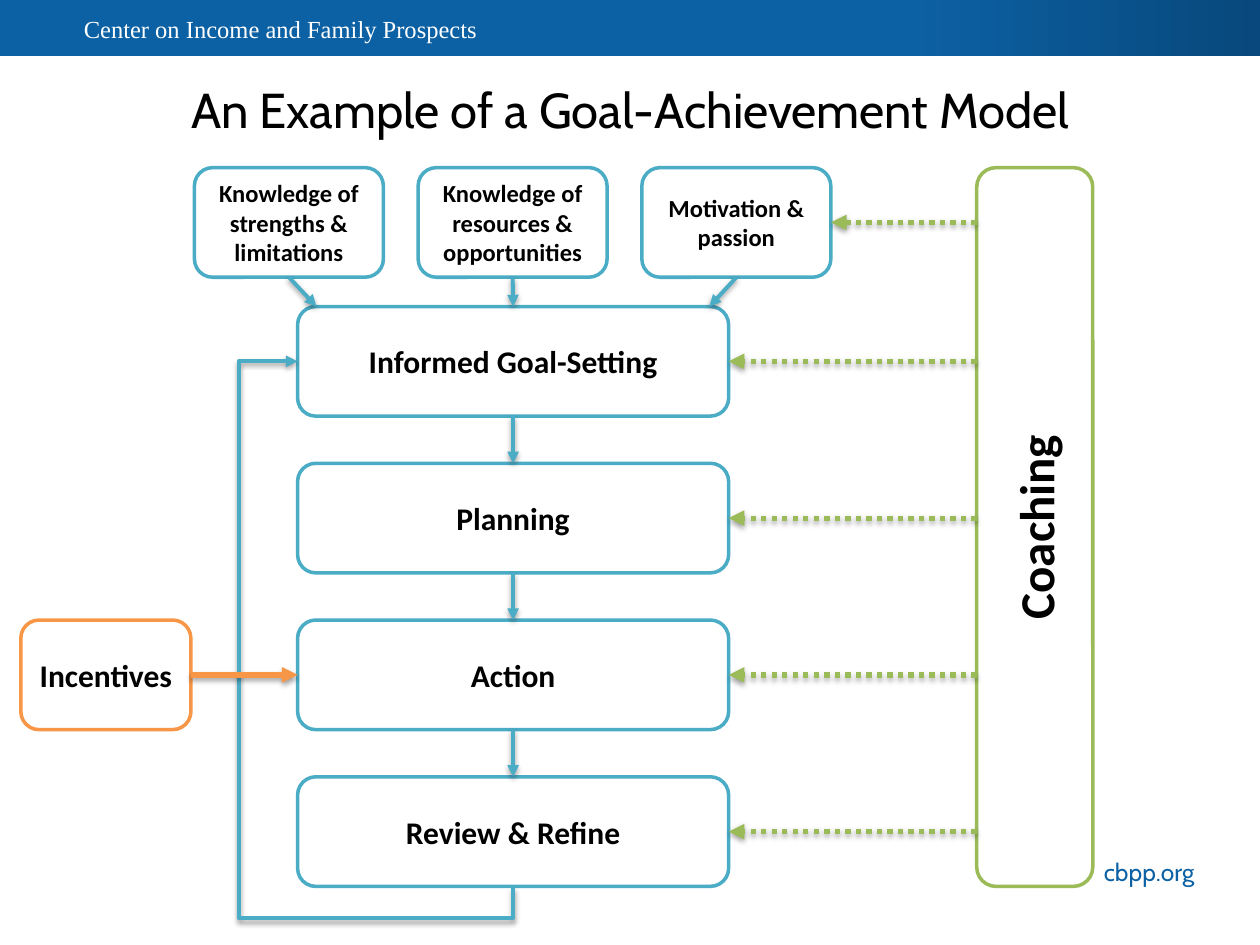
from lxml import etree
from pptx import Presentation
from pptx import util as u
from pptx.dml.color import RGBColor
from pptx.enum import dml, shapes, text
from pptx.oxml import parse_xml
from pptx.oxml.ns import nsdecls, qn

TEAL, GREEN, ORANGE = "4BACC6", "9BBB59", "F79646"
BLUE, NAVY, WHITE, BLACK = "0C61A4", "08487C", "FFFFFF", "000000"

# Lengths in cm
BOX_H = 2.21
INPUT_LEFT, INPUT_TOP, INPUT_W, INPUT_STEP = 3.92, 3.38, 3.81, 4.51
STAGE_LEFT, STAGE_TOP, STAGE_W, STAGE_STEP = 6.0, 6.18, 8.69, 3.16
COACH_LEFT, COACH_W = 19.69, 2.34
INCENTIVE_LEFT, INCENTIVE_W = 0.42, 3.43

INPUTS = ["Knowledge of strengths & limitations",
          "Knowledge of resources & opportunities",
          "Motivation & passion"]
STAGES = ["Informed Goal-Setting", "Planning", "Action", "Review & Refine"]

SHADOW = (f'<a:effectLst {nsdecls("a")}><a:outerShdw blurRad="40000" dist="20000" '
          'dir="5400000" rotWithShape="0"><a:srgbClr val="000000">'
          '<a:alpha val="38000"/></a:srgbClr></a:outerShdw></a:effectLst>')


def color(value):
    return RGBColor.from_string(value)


def cm(*lengths):
    return [u.Cm(length) for length in lengths]


def write(frame, words, size, font, ink, align, anchor, bold=False):
    frame.word_wrap = True
    frame.vertical_anchor = anchor
    paragraph = frame.paragraphs[0]
    paragraph.alignment = align
    run = paragraph.add_run()
    run.text = words
    run.font.size = u.Pt(size)
    run.font.name = font
    run.font.bold = bold
    run.font.color.rgb = color(ink)


def add_panel(slide, kind, left, top, width, height):
    panel = slide.shapes.add_shape(kind, *cm(left, top, width, height))
    panel.shadow.inherit = False
    panel.line.fill.background()
    return panel


def add_box(slide, words, left, top, width, height, edge, size):
    box = add_panel(slide, shapes.MSO_SHAPE.ROUNDED_RECTANGLE, left, top, width, height)
    box.fill.solid()
    box.fill.fore_color.rgb = color(WHITE)
    box.line.color.rgb = color(edge)
    box.line.width = u.Pt(2)
    write(box.text_frame, words, size, "Calibri", BLACK,
          text.PP_ALIGN.CENTER, text.MSO_ANCHOR.MIDDLE, bold=True)
    return box


def add_arrow(slide, start, end, ink, width, dotted=False,
              kind=shapes.MSO_CONNECTOR.STRAIGHT):
    arrow = slide.shapes.add_connector(kind, *cm(*start, *end))
    arrow.line.color.rgb = color(ink)
    arrow.line.width = u.Pt(width)
    if dotted:
        arrow.line.dash_style = dml.MSO_LINE.ROUND_DOT
    etree.SubElement(arrow.line._get_or_add_ln(), qn("a:tailEnd"), type="triangle")
    arrow.element.spPr.append(parse_xml(SHADOW))
    return arrow


def add_feedback_loop(slide, start, end):
    """Elbow arrow that leaves downward, runs left of the stages and returns."""
    across, rise = start[0] - end[0], start[1] - end[1]
    mid_x, mid_y = (start[0] + end[0]) / 2, (start[1] + end[1]) / 2
    loop = add_arrow(slide, (mid_x - rise / 2, mid_y - across / 2),
                     (mid_x + rise / 2, mid_y + across / 2), TEAL, 2.25,
                     kind=shapes.MSO_CONNECTOR.ELBOW)
    frame = loop.element.spPr.find(qn("a:xfrm"))
    frame.set("rot", "5400000")
    frame.set("flipH", "1")
    geometry = loop.element.spPr.find(qn("a:prstGeom"))
    geometry.set("prst", "bentConnector4")
    guides = geometry.find(qn("a:avLst"))
    for name, value in (("adj1", -6000), ("adj2", 127300)):
        etree.SubElement(guides, qn("a:gd"), name=name, fmla=f"val {value}")


def add_header(slide):
    band = add_panel(slide, shapes.MSO_SHAPE.RECTANGLE, 0, 0, 25.4, 1.14)
    band.fill.gradient()
    band.fill.gradient_angle = 0
    for stop, position, ink in zip(band.fill.gradient_stops, (0.72, 1), (BLUE, NAVY)):
        stop.position = position
        stop.color.rgb = color(ink)

    owner = slide.shapes.add_textbox(*cm(1.69, 0.15, 15.54, 1.07)).text_frame
    owner.margin_left = owner.margin_right = 0
    write(owner, "Center on Income and Family Prospects", 14, "Times New Roman",
          WHITE, text.PP_ALIGN.LEFT, text.MSO_ANCHOR.TOP)

    site = slide.shapes.add_textbox(*cm(20.52, 17.15, 3.81, 0.86)).text_frame
    write(site, "cbpp.org", 14, "Cabin", BLUE,
          text.PP_ALIGN.RIGHT, text.MSO_ANCHOR.TOP)


def add_title(slide):
    title = slide.shapes.title
    title.left, title.top, title.width, title.height = cm(1.27, 1.47, 22.86, 2.24)
    write(title.text_frame, "An Example of a Goal-Achievement Model", 28, "Cabin",
          BLACK, text.PP_ALIGN.CENTER, text.MSO_ANCHOR.TOP)


def main():
    deck = Presentation()
    deck.slide_width, deck.slide_height = cm(25.4, 19.05)
    slide = deck.slides.add_slide(deck.slide_layouts[5])
    add_header(slide)
    add_title(slide)

    stage_tops = [STAGE_TOP + i * STAGE_STEP for i in range(len(STAGES))]
    stage_mids = [top + BOX_H / 2 for top in stage_tops]
    stage_right = STAGE_LEFT + STAGE_W
    center = STAGE_LEFT + STAGE_W / 2
    input_bottom = INPUT_TOP + BOX_H
    stages_bottom = stage_tops[-1] + BOX_H

    # Inputs and stages
    for i, words in enumerate(INPUTS):
        add_box(slide, words, INPUT_LEFT + i * INPUT_STEP, INPUT_TOP,
                INPUT_W, BOX_H, TEAL, 14)
    for words, top in zip(STAGES, stage_tops):
        add_box(slide, words, STAGE_LEFT, top, STAGE_W, BOX_H, TEAL, 18)

    # Flow between stages, from the inputs, and back to the start
    add_feedback_loop(slide, (center, stages_bottom), (STAGE_LEFT, stage_mids[0]))
    for top, following in zip(stage_tops, stage_tops[1:]):
        add_arrow(slide, (center, top + BOX_H), (center, following), TEAL, 2.25)
    for i, target in enumerate((6.38, center, 14.3)):
        source = INPUT_LEFT + INPUT_W / 2 + i * INPUT_STEP
        add_arrow(slide, (source, input_bottom), (target, STAGE_TOP), TEAL, 2.25)

    # Coaching and its dotted links
    coaching = add_box(slide, "Coaching", COACH_LEFT, INPUT_TOP, COACH_W,
                       stages_bottom - INPUT_TOP, GREEN, 28)
    coaching.element.txBody.bodyPr.set("vert", "vert270")
    inputs_right = INPUT_LEFT + 2 * INPUT_STEP + INPUT_W
    links = [(inputs_right, INPUT_TOP + BOX_H / 2)]
    links += [(stage_right, mid) for mid in stage_mids]
    for x, y in links:
        add_arrow(slide, (COACH_LEFT, y), (x, y), GREEN, 3, dotted=True)

    # Incentives feed the action stage
    action = STAGES.index("Action")
    add_box(slide, "Incentives", INCENTIVE_LEFT, stage_tops[action],
            INCENTIVE_W, BOX_H, ORANGE, 18)
    add_arrow(slide, (INCENTIVE_LEFT + INCENTIVE_W, stage_mids[action]),
              (STAGE_LEFT, stage_mids[action]), ORANGE, 3)

    deck.save("out.pptx")


if __name__ == "__main__":
    main()
